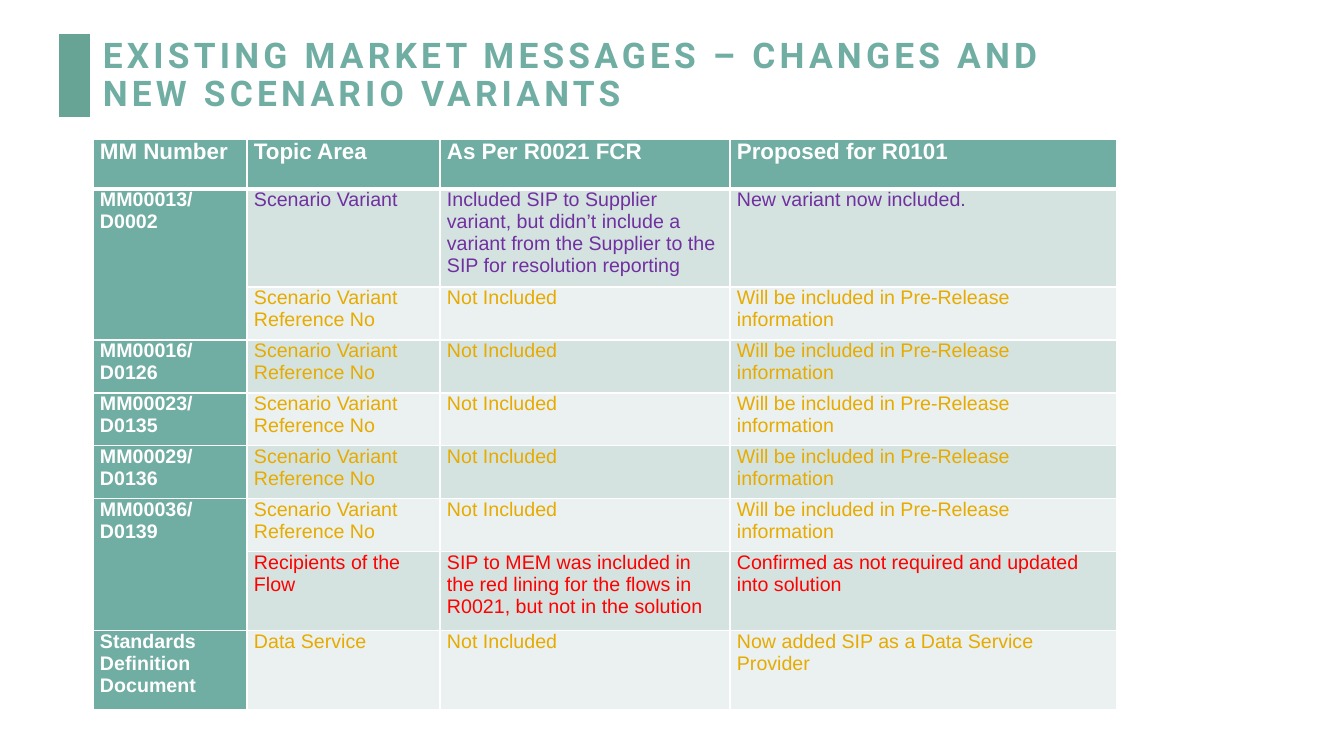
import pptx
import pptx.dml.color
import pptx.enum.shapes
import pptx.enum.text
import pptx.oxml
import pptx.oxml.ns
import pptx.util

TITLE = "EXISTING MARKET MESSAGES – CHANGES AND NEW SCENARIO VARIANTS"
TEAL, WHITE = "70ADA3", "FFFFFF"
PURPLE, AMBER, RED = "7030A0", "E7AB00", "FF0000"
BANDS = ("D5E3E0", "EBF1F0")

HEADINGS = ("MM Number", "Topic Area", "As Per R0021 FCR", "Proposed for R0101")
PENDING = ("Scenario Variant Reference No", "Not Included",
           "Will be included in Pre-Release information")
MESSAGES = [
    ("MM00013/\nD0002", [
        (PURPLE, 98, ("Scenario Variant",
                      "Included SIP to Supplier variant, but didn’t include a variant "
                      "from the Supplier to the SIP for resolution reporting",
                      "New variant now included.")),
        (AMBER, 53, PENDING)]),
    ("MM00016/\nD0126", [(AMBER, 53, PENDING)]),
    ("MM00023/\nD0135", [(AMBER, 53, PENDING)]),
    ("MM00029/\nD0136", [(AMBER, 53, PENDING)]),
    ("MM00036/\nD0139", [
        (AMBER, 53, PENDING),
        (RED, 79, ("Recipients of the Flow",
                   "SIP to MEM was included in the red lining for the flows in R0021, "
                   "but not in the solution",
                   "Confirmed as not required and updated into solution"))]),
    ("Standards Definition Document", [
        (AMBER, 79, ("Data Service", "Not Included",
                     "Now added SIP as a Data Service Provider"))]),
]
COLUMN_WIDTHS = (154, 193, 290, 387)
HEADER_HEIGHT = 50
TABLE_LEFT, TABLE_TOP = 93, 139


def px(length):
    return pptx.util.Emu(round(length * 914400 / 100.8))


def color(value):
    return pptx.dml.color.RGBColor.from_string(value)


def set_font(para, name, size, value, bold):
    para.font.name = name
    para.font.size = pptx.util.Pt(size)
    para.font.bold = bold
    para.font.color.rgb = color(value)


def set_borders(cell, bottom_width):
    properties = cell._tc.get_or_add_tcPr()
    widths = (("lnL", 1), ("lnR", 1), ("lnT", 1), ("lnB", bottom_width))
    for position, (side, width) in enumerate(widths):
        properties.insert(position, pptx.oxml.parse_xml(
            f'<a:{side} {pptx.oxml.ns.nsdecls("a")} w="{width * 12700}">'
            f'<a:solidFill><a:srgbClr val="{WHITE}"/></a:solidFill></a:{side}>'))


def fill_cell(cell, text, fill, font_color, bold, size=14, bottom_width=1):
    cell.margin_left = cell.margin_right = px(7)
    cell.margin_top = cell.margin_bottom = 0
    cell.fill.solid()
    cell.fill.fore_color.rgb = color(fill)
    set_borders(cell, bottom_width)
    cell.text_frame.text = text
    for para in cell.text_frame.paragraphs:
        set_font(para, "Arial", size, font_color, bold)


def add_title(page):
    accent = page.shapes.add_shape(
        pptx.enum.shapes.MSO_SHAPE.RECTANGLE, px(59), px(34), px(31), px(83))
    accent.shadow.inherit = False
    accent.fill.solid()
    accent.fill.fore_color.rgb = color("68A495")
    accent.line.fill.background()

    box = page.shapes.add_textbox(px(93), px(40), px(1023), px(73))
    box.text_frame.word_wrap = True
    box.text_frame.vertical_anchor = pptx.enum.text.MSO_ANCHOR.MIDDLE
    para = box.text_frame.paragraphs[0]
    span = para.add_run()
    span.text = TITLE
    para.line_spacing = 0.9
    set_font(para, "Roboto", 25.2, TEAL, True)
    span.font._element.set("spc", "300")


def add_messages(page):
    heights = [HEADER_HEIGHT] + [height for _, topics in MESSAGES for _, height, _ in topics]
    table = page.shapes.add_table(
        len(heights), len(COLUMN_WIDTHS), px(TABLE_LEFT), px(TABLE_TOP),
        px(sum(COLUMN_WIDTHS)), px(sum(heights))).table
    for column, width in zip(table.columns, COLUMN_WIDTHS):
        column.width = px(width)
    for row, height in zip(table.rows, heights):
        row.height = px(height)

    for column, heading in enumerate(HEADINGS):
        fill_cell(table.cell(0, column), heading, TEAL, WHITE, True, 16, 3)

    row = 1
    for number, topics in MESSAGES:
        first = row
        for font_color, _, texts in topics:
            fill_cell(table.cell(row, 0), number if row == first else "", TEAL, WHITE, True)
            for column, text in enumerate(texts, 1):
                fill_cell(table.cell(row, column), text, BANDS[(row - 1) % 2], font_color, False)
            row += 1
        if len(topics) > 1:
            table.cell(first, 0).merge(table.cell(row - 1, 0))


def main():
    deck = pptx.Presentation()
    deck.slide_width, deck.slide_height = px(1344), px(756)
    page = deck.slides.add_slide(deck.slide_layouts[6])
    add_title(page)
    add_messages(page)
    deck.save("out.pptx")


if __name__ == "__main__":
    main()
